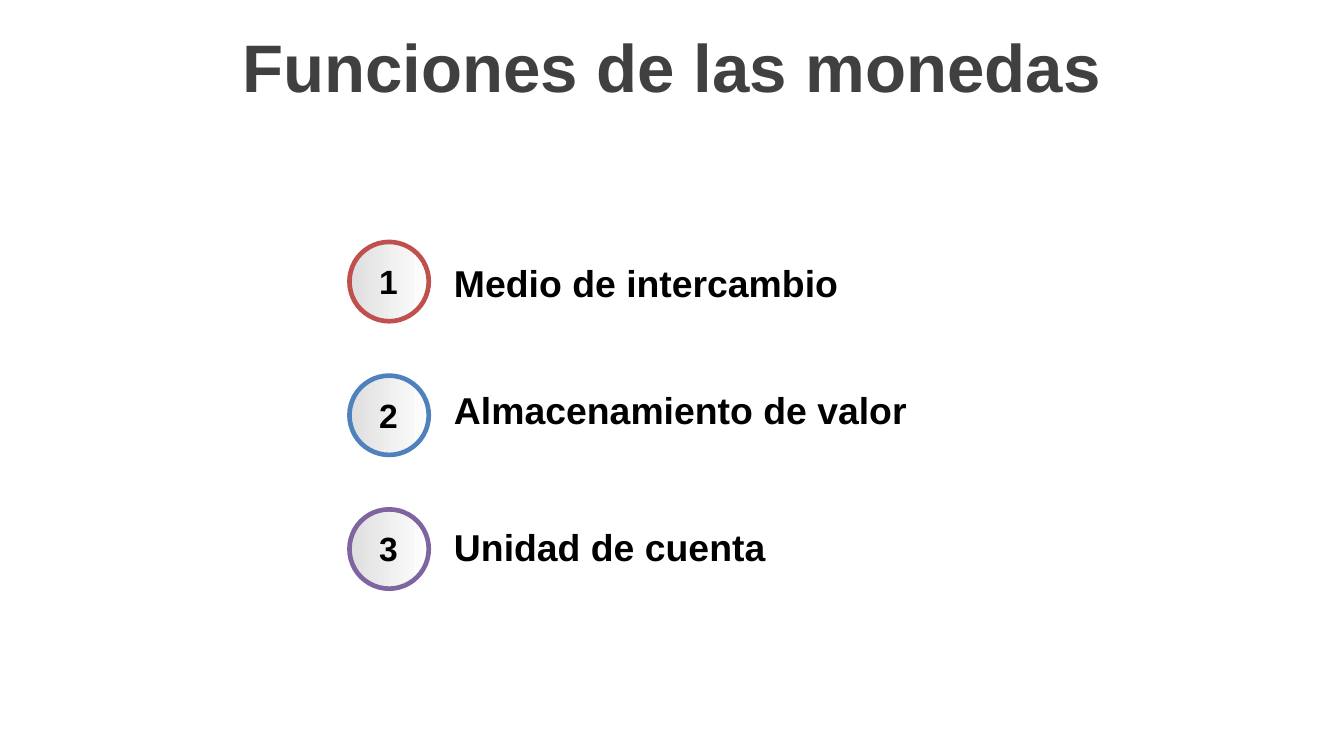
from pptx import Presentation
from pptx import util as u
from pptx.dml.color import RGBColor
from pptx.enum import shapes, text

BLACK = RGBColor(0x00, 0x00, 0x00)
WHITE = RGBColor(0xFF, 0xFF, 0xFF)
SILVER = RGBColor(0xDE, 0xDE, 0xDE)
CHARCOAL = RGBColor(0x40, 0x40, 0x40)
RED = RGBColor(0xC0, 0x50, 0x4D)
BLUE = RGBColor(0x4F, 0x81, 0xBD)
PURPLE = RGBColor(0x80, 0x64, 0xA2)

FUNCTIONS = [
    ("Medio de intercambio", RED, 0.09),
    ("Almacenamiento de valor", BLUE, 0.04),
    ("Unidad de cuenta", PURPLE, 0.06),
]


def add_text(parent, box, wording, size, color=BLACK,
             align=text.PP_ALIGN.LEFT, anchor=text.MSO_ANCHOR.TOP):
    sp = parent.add_textbox(*map(u.Inches, box))
    tf = sp.text_frame
    tf.word_wrap = True
    tf.vertical_anchor = anchor
    p = tf.paragraphs[0]
    p.text = wording
    p.alignment = align
    p.font.name = "Arial"
    p.font.size = u.Pt(size)
    p.font.bold = True
    p.font.color.rgb = color


def add_title(s, box):
    add_text(s.shapes, box, "Funciones de las monedas", 36, CHARCOAL,
             text.PP_ALIGN.CENTER, text.MSO_ANCHOR.MIDDLE)


def add_badge(s, box, number, color):
    x, y, w, h = box
    group = s.shapes.add_group_shape()
    sp = group.shapes.add_shape(shapes.MSO_SHAPE.OVAL, *map(u.Inches, box))
    sp.shadow.inherit = False
    sp.fill.gradient()
    sp.fill.gradient_angle = 0
    for stop, shade, position in zip(sp.fill.gradient_stops, (SILVER, WHITE), (0, 1)):
        stop.color.rgb = shade
        stop.position = position
    sp.line.color.rgb = color
    sp.line.width = u.Pt(2.5)
    add_text(group.shapes, (x + 0.09, y + 0.09, w - 0.19, h - 0.19), str(number), 18,
             align=text.PP_ALIGN.CENTER, anchor=text.MSO_ANCHOR.MIDDLE)


def add_functions(s, box):
    x, y, w, h = box
    size = 0.59
    pitch = (h - size) / (len(FUNCTIONS) - 1)
    for i, (label, color, drop) in enumerate(FUNCTIONS):
        top = y + i * pitch
        add_badge(s, (x, top, size, size), i + 1, color)
        add_text(s.shapes, (x + 0.68, top + drop, w - 0.68, 0.44), label, 20)


def main():
    prs = Presentation()
    prs.slide_width = u.Inches(10)
    prs.slide_height = prs.slide_width * 9 // 16
    s = prs.slides.add_slide(prs.slide_layouts[6])
    add_title(s, (0, 0, 10, 0.97))
    add_functions(s, (2.6, 1.8, 4.51, 2.58))
    prs.save("out.pptx")


if __name__ == "__main__":
    main()
